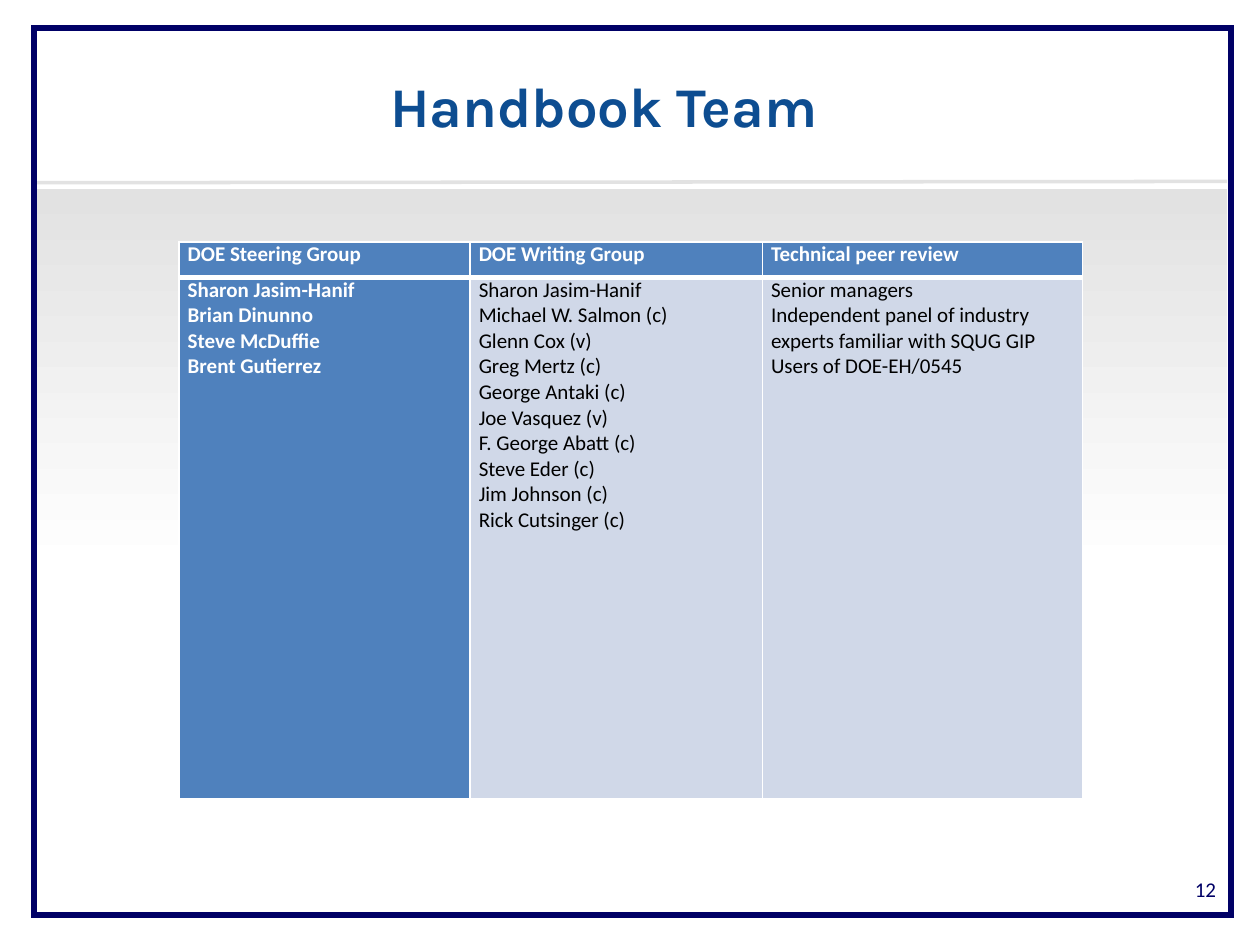
from lxml import etree
from pptx import Presentation
from pptx.dml.color import RGBColor
from pptx.enum import shapes, text
from pptx.oxml import ns
from pptx.util import Inches, Pt

NAVY = RGBColor(0x00, 0x00, 0x66)
BLUE = RGBColor(0x0D, 0x4D, 0x91)
STEEL = RGBColor(0x4F, 0x81, 0xBD)
PALE = RGBColor(0xD0, 0xD8, 0xE8)
GRAY = RGBColor(0xE2, 0xE2, 0xE2)
WHITE = RGBColor(0xFF, 0xFF, 0xFF)
BLACK = RGBColor(0x00, 0x00, 0x00)

TEAM = [
    ("DOE Steering Group", 2.31,
     ["Sharon Jasim-Hanif", "Brian Dinunno", "Steve McDuffie", "Brent Gutierrez"]),
    ("DOE Writing Group", 2.32,
     ["Sharon Jasim-Hanif", "Michael W. Salmon (c)", "Glenn Cox (v)", "Greg Mertz (c)",
      "George Antaki (c)", "Joe Vasquez (v)", "F. George Abatt (c)", "Steve Eder (c)",
      "Jim Johnson (c)", "Rick Cutsinger (c)"]),
    ("Technical peer review", 2.54,
     ["Senior managers", "Independent panel of industry experts familiar with SQUG GIP",
      "Users of DOE-EH/0545"]),
]


def style(para, size, face, color, bold=False):
    """Set the font of one paragraph."""
    font = para.font
    font.size, font.name, font.bold = Pt(size), face, bold
    font.color.rgb = color


def label(slide, box, words, size, face, color, align, bold=False):
    """Place one line of text in a box and return its paragraph."""
    frame = slide.shapes.add_textbox(*map(Inches, box)).text_frame
    frame.word_wrap = True
    frame.vertical_anchor = text.MSO_ANCHOR.MIDDLE
    para = frame.paragraphs[0]
    para.text, para.alignment = words, align
    style(para, size, face, color, bold)
    return para


def panel(slide, box):
    """Draw a plain rectangle without shadow."""
    rect = slide.shapes.add_shape(shapes.MSO_SHAPE.RECTANGLE, *map(Inches, box))
    rect.shadow.inherit = False
    return rect


def backdrop(slide, left, top, width, height):
    """Draw the fading band, the rule and the navy frame."""
    band = panel(slide, (left + 0.02, top + 1.28, width - 0.05, 3.03))
    band.line.fill.background()
    band.fill.gradient()
    band.fill.gradient_angle = 90
    for stop, color in zip(band.fill.gradient_stops, (WHITE, GRAY)):
        stop.color.rgb = color

    ends = left + 0.01, top + 1.23, left + width - 0.03, top + 1.22
    rule = slide.shapes.add_connector(shapes.MSO_CONNECTOR.STRAIGHT, *map(Inches, ends))
    rule.line.color.rgb, rule.line.width = GRAY, Pt(2)
    etree.SubElement(rule._element.spPr, ns.qn("a:effectLst"))

    frame = panel(slide, (left, top, width, height))
    frame.fill.background()
    frame.line.color.rgb, frame.line.width = NAVY, Pt(3.25)
    edge = frame._element.spPr.find(ns.qn("a:ln"))
    etree.SubElement(edge, ns.qn("a:miter"), lim="800000")


def border(cell, base):
    """Give a cell white borders, with its own width at the base."""
    props = cell._tc.get_or_add_tcPr()
    for side, width in zip("LRTB", (1, 1, 1, base)):
        line = etree.SubElement(props, ns.qn("a:ln" + side), w=str(Pt(width)))
        fill = etree.SubElement(line, ns.qn("a:solidFill"))
        etree.SubElement(fill, ns.qn("a:srgbClr"), val=str(WHITE))


def fill_cell(cell, lines, strong, base):
    """Write lines into a cell, strong or plain."""
    border(cell, base)
    cell.fill.solid()
    cell.fill.fore_color.rgb = STEEL if strong else PALE
    cell.margin_left = cell.margin_right = Inches(0.07)
    cell.margin_top = cell.margin_bottom = 0
    cell.text = "\n".join(lines)
    for para in cell.text_frame.paragraphs:
        style(para, 12, "Calibri", WHITE if strong else BLACK, strong)


def roster(slide, left, top, width, height):
    """Build the table of groups and their members."""
    box = map(Inches, (left, top, width, height))
    table = slide.shapes.add_table(2, len(TEAM), *box).table
    table.rows[0].height = Inches(0.28)
    table.rows[1].height = Inches(height - 0.28)
    for col, (head, span, names) in enumerate(TEAM):
        table.columns[col].width = Inches(span)
        fill_cell(table.cell(0, col), [head], True, 3)
        fill_cell(table.cell(1, col), names, col == 0, 1)


def main():
    """Build and save the slide."""
    deck = Presentation()
    deck.slide_width, deck.slide_height = Inches(10), Inches(7.5)
    slide = deck.slides.add_slide(deck.slide_layouts[6])
    align = text.PP_ALIGN
    backdrop(slide, 0.27, 0.22, 9.5, 7.04)
    label(slide, (9.25, 6.86, 0.5, 0.4), "12", 12, "Calibri", NAVY, align.RIGHT)
    title = label(slide, (1.42, 0.33, 6.75, 1.08), "Handbook Team", 32, "Karla", BLUE,
                  align.CENTER, True)
    title.line_spacing = 0.9
    roster(slide, 1.42, 1.92, 7.17, 4.42)
    deck.save("out.pptx")


if __name__ == "__main__":
    main()
